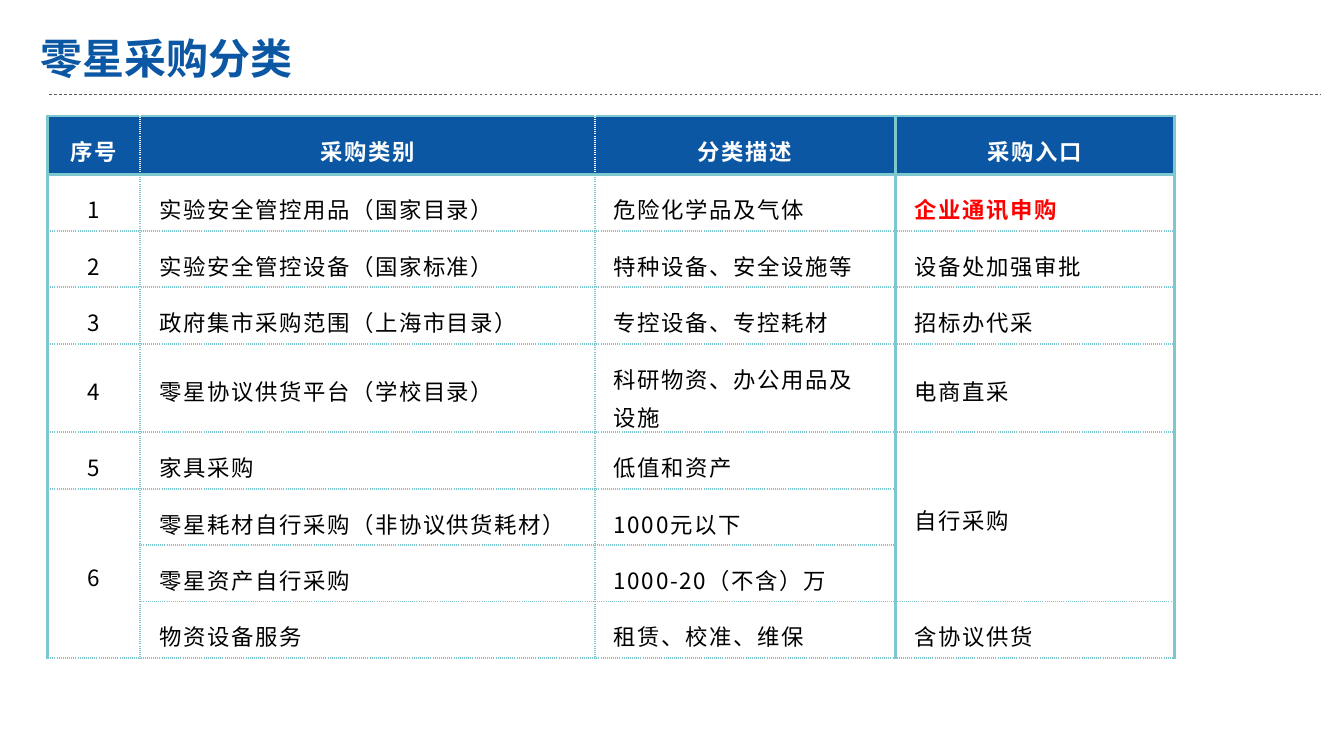
from lxml.etree import SubElement
from pptx import Presentation
from pptx.dml.color import RGBColor
from pptx.enum.dml import MSO_LINE
from pptx.enum.shapes import MSO_CONNECTOR
from pptx.enum.text import MSO_ANCHOR, MSO_AUTO_SIZE, PP_ALIGN
from pptx.oxml import parse_xml
from pptx.oxml.ns import nsdecls, qn
from pptx.util import Inches, Pt

BLUE = RGBColor(0x0B, 0x57, 0xA4)
TEAL = RGBColor(0x7D, 0xC7, 0xCE)
GRAY = RGBColor(0x59, 0x59, 0x59)
WHITE = RGBColor(0xFF, 0xFF, 0xFF)
BLACK = RGBColor(0, 0, 0)
RED = RGBColor(0xFF, 0, 0)
FONT = "Noto Sans CJK SC"

SOLID = (TEAL, 2.25, "solid")
DOTTED = (TEAL, 1.5, "sysDot")
HEADER_DOTTED = (WHITE, 1.5, "sysDot")


def style_run(run, size, color, bold):
    run.font.name = FONT
    run.font.size = Pt(size)
    run.font.bold = bold
    run.font.color.rgb = color
    SubElement(run.font._element, qn("a:ea")).set("typeface", FONT)


def set_borders(cell, left, right, top, bottom):
    props = cell._tc.get_or_add_tcPr()
    for place, (side, edge) in enumerate(zip("LRTB", (left, right, top, bottom))):
        color, width, dash = edge
        props.insert(place, parse_xml(
            f'<a:ln{side} {nsdecls("a")} w="{Pt(width)}">'
            f'<a:solidFill><a:srgbClr val="{color}"/></a:solidFill>'
            f'<a:prstDash val="{dash}"/></a:ln{side}>'))


prs = Presentation()
prs.slide_width, prs.slide_height = Inches(13.33), Inches(7.5)
slide = prs.slides.add_slide(prs.slide_layouts[6])

# Title
title = slide.shapes.add_textbox(Inches(0.3), Inches(0.27), Inches(3.96), Inches(0.6))
title_frame = title.text_frame
title_frame.word_wrap = True
title_frame.auto_size = MSO_AUTO_SIZE.SHAPE_TO_FIT_TEXT
title_frame.text = "零星采购分类"
style_run(title_frame.paragraphs[0].runs[0], 30, BLUE, True)

# Dashed rule under the title
rule = slide.shapes.add_connector(
    MSO_CONNECTOR.STRAIGHT, Inches(0.49), Inches(0.94), Inches(13.09), Inches(0.94))
rule.line.color.rgb = GRAY
rule.line.width = Pt(0.5)
rule.line.dash_style = MSO_LINE.DASH
SubElement(rule._element.spPr, qn("a:effectLst"))

# Purchase categories; None marks a cell covered by a merge
ENTRY = "企业通讯申购"
categories = [
    ("序号", "采购类别", "分类描述", "采购入口"),
    ("1", "实验安全管控用品（国家目录）", "危险化学品及气体", ENTRY),
    ("2", "实验安全管控设备（国家标准）", "特种设备、安全设施等", "设备处加强审批"),
    ("3", "政府集市采购范围（上海市目录）", "专控设备、专控耗材", "招标办代采"),
    ("4", "零星协议供货平台（学校目录）", "科研物资、办公用品及设施", "电商直采"),
    ("5", "家具采购", "低值和资产", "自行采购"),
    ("6", "零星耗材自行采购（非协议供货耗材）", "1000元以下", None),
    (None, "零星资产自行采购", "1000-20（不含）万", None),
    (None, "物资设备服务", "租赁、校准、维保", "含协议供货"),
]
column_widths = (0.92, 4.51, 2.98, 2.77)
row_heights = [0.58] + [0.56] * (len(categories) - 1)

table = slide.shapes.add_table(
    len(categories), len(column_widths), Inches(0.47), Inches(1.15),
    Inches(sum(column_widths)), Inches(sum(row_heights))).table
table.horz_banding = False
for column, width in zip(table.columns, column_widths):
    column.width = Inches(width)
for row, height in zip(table.rows, row_heights):
    row.height = Inches(height)

for r, texts in enumerate(categories):
    header = r == 0
    inner = HEADER_DOTTED if header else DOTTED
    verticals = (SOLID, inner, inner, SOLID, SOLID)
    for c, text in enumerate(texts):
        cell = table.cell(r, c)
        if header:
            cell.fill.solid()
            cell.fill.fore_color.rgb = BLUE
        else:
            cell.fill.background()
        set_borders(cell, verticals[c], verticals[c + 1],
                    SOLID if r < 2 else DOTTED, SOLID if header else DOTTED)
        cell.vertical_anchor = MSO_ANCHOR.MIDDLE
        cell.margin_left = cell.margin_right = Inches(0.19)
        cell.margin_top = cell.margin_bottom = Inches(0.12)
        if text is None:
            continue
        cell.text_frame.text = text
        paragraph = cell.text_frame.paragraphs[0]
        paragraph.line_spacing = 1.2
        paragraph.alignment = PP_ALIGN.CENTER if header or c == 0 else PP_ALIGN.LEFT
        color = WHITE if header else RED if text == ENTRY else BLACK
        run = paragraph.runs[0]
        style_run(run, 16, color, header or text == ENTRY)
        run.font._element.set("spc", "120")

# Merged cells: self-service entry and category 6
table.cell(5, 3).merge(table.cell(7, 3))
table.cell(6, 0).merge(table.cell(8, 0))

prs.save("out.pptx")
